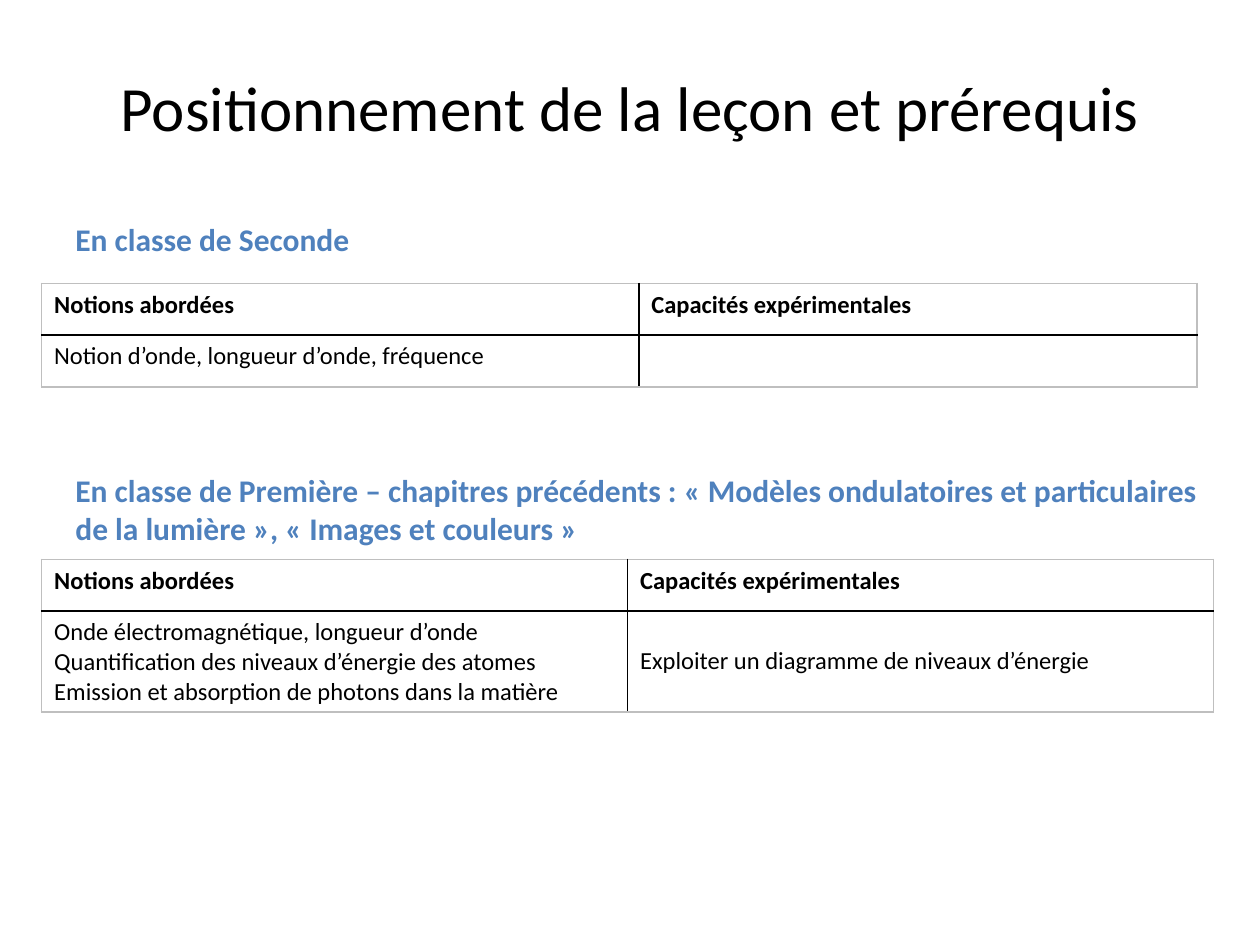
from dataclasses import dataclass

from lxml.etree import SubElement
from pptx import Presentation
from pptx.dml.color import RGBColor
from pptx.enum.text import MSO_ANCHOR, PP_ALIGN
from pptx.oxml.ns import qn
from pptx.util import Inches, Pt


@dataclass(frozen=True)
class Theme:
    font: str = "Calibri"
    text: str = "000000"
    accent: str = "4F81BD"
    inner_border: str = "000000"
    outer_border: str = "BFBFBF"
    title_size: int = 36
    heading_size: int = 18
    table_size: int = 14
    border_width: int = 1


THEME = Theme()
HEADERS = ["Notions abordées", "Capacités expérimentales"]


def format_text(text_frame, size, color=THEME.text, bold=False):
    values = {"name": THEME.font, "size": Pt(size), "bold": bold}
    for paragraph in text_frame.paragraphs:
        for name, value in values.items():
            setattr(paragraph.font, name, value)
        paragraph.font.color.rgb = RGBColor.from_string(color)


def add_title(slide, text):
    title = slide.shapes.title
    place = {"left": 0.5, "top": 0.22, "width": 9, "height": 1.25}
    for name, value in place.items():
        setattr(title, name, Inches(value))
    frame = title.text_frame
    frame.text = text
    frame.vertical_anchor = MSO_ANCHOR.MIDDLE
    frame.paragraphs[0].alignment = PP_ALIGN.CENTER
    format_text(frame, THEME.title_size)


def add_heading(slide, text, top, width, height):
    box = slide.shapes.add_textbox(
        Inches(0.5), Inches(top), Inches(width), Inches(height))
    frame = box.text_frame
    frame.word_wrap = True
    frame.text = text
    format_text(frame, THEME.heading_size, THEME.accent, bold=True)


def set_borders(cell, outer_sides):
    """Draw all four sides, with the table's outer sides in the lighter colour."""
    properties = cell._tc.get_or_add_tcPr()
    for side in "LRTB":
        line = SubElement(properties, qn(f"a:ln{side}"),
                          w=str(Pt(THEME.border_width)))
        color = THEME.outer_border if side in outer_sides else THEME.inner_border
        SubElement(SubElement(line, qn("a:solidFill")), qn("a:srgbClr"), val=color)


def add_notions_table(slide, notions, skills, top, column_widths, row_heights):
    rows = [HEADERS, [notions, skills]]
    frame = slide.shapes.add_table(
        len(rows), len(HEADERS), Inches(0.33), Inches(top),
        Inches(sum(column_widths)), Inches(sum(row_heights)))
    table = frame.table
    table.first_row = table.horz_banding = False
    for column, width in zip(table.columns, column_widths):
        column.width = Inches(width)
    for row_index, (texts, height) in enumerate(zip(rows, row_heights)):
        table.rows[row_index].height = Inches(height)
        for column_index, text in enumerate(texts):
            cell = table.cell(row_index, column_index)
            cell.text = text
            format_text(cell.text_frame, THEME.table_size, bold=row_index == 0)
            set_borders(cell, "TB"[row_index] + "LR"[column_index])
            cell.fill.background()
    return table


def main():
    presentation = Presentation()
    presentation.slide_width = Inches(10)
    presentation.slide_height = Inches(7.5)
    slide = presentation.slides.add_slide(presentation.slide_layouts[5])

    add_title(slide, "Positionnement de la leçon et prérequis")
    add_heading(slide, "En classe de Seconde", 1.7, 5, 0.4)
    add_notions_table(slide, "Notion d’onde, longueur d’onde, fréquence", "",
                      2.25, [4.74, 4.43], [0.41, 0.41])

    add_heading(
        slide,
        "En classe de Première – chapitres précédents : « Modèles ondulatoires "
        "et particulaires de la lumière », « Images et couleurs »",
        3.69, 9.39, 0.71)
    première = add_notions_table(
        slide,
        "Onde électromagnétique, longueur d’onde\n"
        "Quantification des niveaux d’énergie des atomes\n"
        "Emission et absorption de photons dans la matière",
        "Exploiter un diagramme de niveaux d’énergie",
        4.44, [4.65, 4.65], [0.41, 0.8])
    première.cell(1, 1).vertical_anchor = MSO_ANCHOR.MIDDLE

    presentation.save("out.pptx")


if __name__ == "__main__":
    main()
